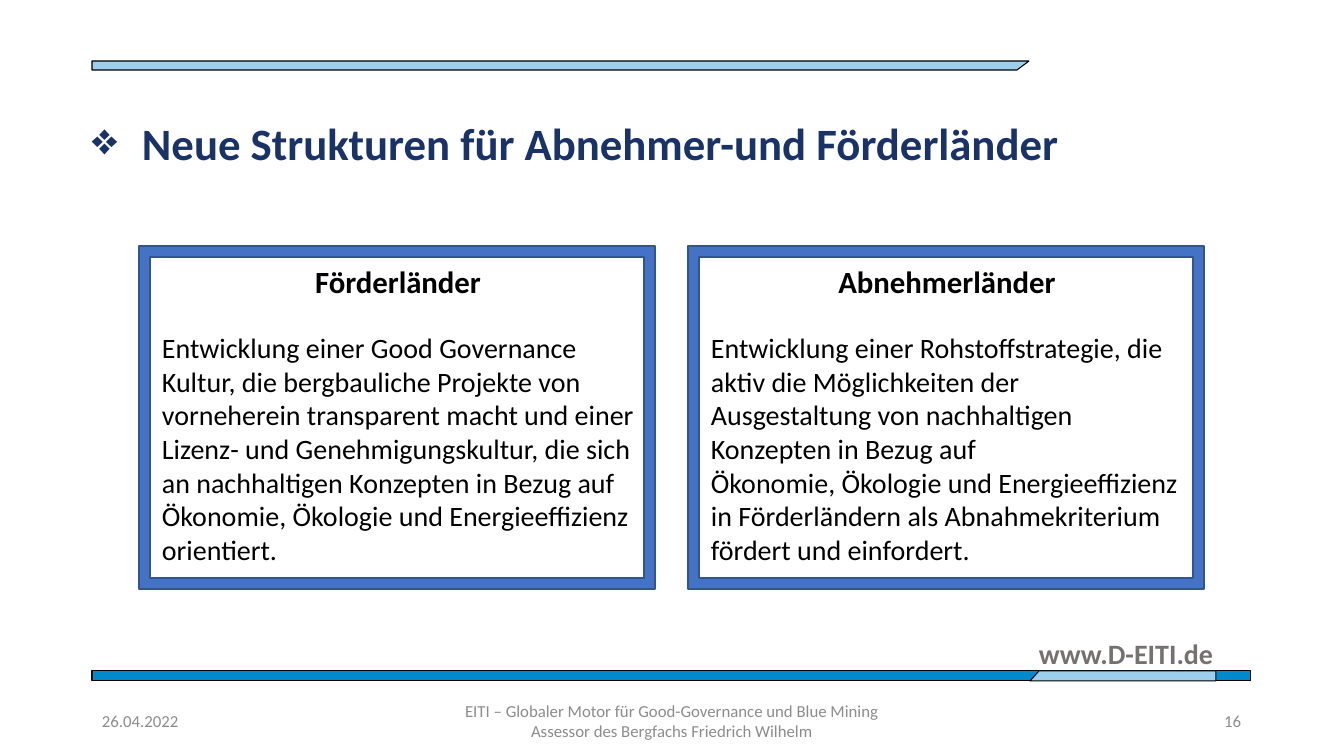
from dataclasses import dataclass

import pptx
import pptx.dml.color
import pptx.enum.shapes
import pptx.enum.text
import pptx.oxml.ns
import pptx.util
from lxml import etree

EMU_PER_PX = 914400 / 100.8
ALIGN = pptx.enum.text.PP_ALIGN
ANCHOR = pptx.enum.text.MSO_ANCHOR


@dataclass(frozen=True)
class Theme:
    font: str = "Calibri"
    title: str = "193268"
    body: str = "000000"
    web: str = "767171"
    footer: str = "8C8C8C"
    pale_bar: str = "9DCEEC"
    strong_bar: str = "008ACB"
    bar_line: str = "000000"
    frame: str = "4472C4"
    frame_line: str = "325491"
    title_size: int = 32
    heading_size: int = 22
    body_size: int = 20
    footer_size: int = 12


@dataclass(frozen=True)
class Box:
    left: int
    top: int
    width: int
    height: int


@dataclass(frozen=True)
class Bar:
    color: str
    points: tuple[tuple[int, int], ...]


@dataclass(frozen=True)
class Panel:
    box: Box
    heading: str
    paragraphs: tuple[str, ...]


@dataclass(frozen=True)
class Label:
    box: Box
    text: str
    size: int
    color: str
    bold: bool = False
    align: ALIGN = ALIGN.LEFT
    anchor: ANCHOR = ANCHOR.MIDDLE


THEME = Theme()

BARS = (
    Bar(THEME.pale_bar, ((92, 70), (1017, 70), (1029, 61), (92, 61))),
    Bar(THEME.strong_bar, ((92, 681), (1251, 681), (1251, 671), (92, 671))),
    Bar(THEME.pale_bar, ((1030, 681), (1216, 681), (1216, 671), (1039, 671))),
)

PANELS = (
    Panel(Box(139, 246, 516, 343), "Förderländer", (
        "Entwicklung einer Good Governance Kultur, die bergbauliche Projekte von "
        "vorneherein transparent macht und einer Lizenz- und Genehmigungskultur, "
        "die sich an nachhaltigen Konzepten in Bezug auf Ökonomie, Ökologie und "
        "Energieeffizienz orientiert.",
    )),
    Panel(Box(688, 246, 516, 343), "Abnehmerländer", (
        "Entwicklung einer Rohstoffstrategie, die aktiv die Möglichkeiten der "
        "Ausgestaltung von nachhaltigen Konzepten in Bezug auf",
        "Ökonomie, Ökologie und Energieeffizienz in Förderländern als "
        "Abnahmekriterium fördert und einfordert.",
    )),
)

LABELS = (
    Label(Box(1029, 632, 201, 44), "www.D-EITI.de", THEME.body_size, THEME.web,
          bold=True, anchor=ANCHOR.TOP),
    Label(Box(92, 701, 302, 40), "26.04.2022", THEME.footer_size, THEME.footer),
    Label(Box(445, 701, 454, 40),
          "EITI – Globaler Motor für Good-Governance und Blue Mining "
          "Assessor des Bergfachs Friedrich Wilhelm",
          THEME.footer_size, THEME.footer, align=ALIGN.CENTER),
    Label(Box(949, 701, 302, 40), "16", THEME.footer_size, THEME.footer,
          align=ALIGN.RIGHT),
)


def px(value: float) -> pptx.util.Emu:
    return pptx.util.Emu(round(value * EMU_PER_PX))


def rgb(color: str) -> pptx.dml.color.RGBColor:
    return pptx.dml.color.RGBColor.from_string(color)


def edges(box: Box) -> tuple[pptx.util.Emu, ...]:
    return px(box.left), px(box.top), px(box.width), px(box.height)


def paint(shape, fill: str, line: str, line_width: int) -> None:
    shape.shadow.inherit = False
    shape.fill.solid()
    shape.fill.fore_color.rgb = rgb(fill)
    shape.line.color.rgb = rgb(line)
    shape.line.width = pptx.util.Pt(line_width)


def add_run(paragraph, text: str, size: int, color: str, bold: bool) -> None:
    run = paragraph.add_run()
    run.text = text
    run.font.name = THEME.font
    run.font.size = pptx.util.Pt(size)
    run.font.bold = bold
    run.font.color.rgb = rgb(color)


def add_text_frame(slide, box: Box, anchor: ANCHOR):
    text_frame = slide.shapes.add_textbox(*edges(box)).text_frame
    text_frame.word_wrap = True
    text_frame.vertical_anchor = anchor
    return text_frame


def add_bar(slide, bar: Bar) -> None:
    start, *rest = bar.points
    builder = slide.shapes.build_freeform(*start, scale=EMU_PER_PX)
    builder.add_line_segments(rest, close=True)
    paint(builder.convert_to_shape(), bar.color, THEME.bar_line, 0)


def add_label(slide, label: Label) -> None:
    paragraph = add_text_frame(slide, label.box, label.anchor).paragraphs[0]
    paragraph.alignment = label.align
    add_run(paragraph, label.text, label.size, label.color, label.bold)


def add_panel(slide, panel: Panel) -> None:
    box = panel.box
    frame = slide.shapes.add_shape(
        pptx.enum.shapes.MSO_SHAPE.FRAME, *edges(box))
    frame.adjustments[0] = 0.032
    paint(frame, THEME.frame, THEME.frame_line, 1)

    inset = Box(box.left + 13, box.top + 12, box.width - 24, box.height - 26)
    text_frame = add_text_frame(slide, inset, ANCHOR.TOP)
    heading = text_frame.paragraphs[0]
    heading.alignment = ALIGN.CENTER
    heading.space_after = pptx.util.Pt(22)
    add_run(heading, panel.heading, THEME.heading_size, THEME.body, True)
    for text in panel.paragraphs:
        add_run(text_frame.add_paragraph(), text, THEME.body_size, THEME.body, False)


def fill_title(slide, text: str) -> None:
    title = slide.shapes.title
    title.left, title.top, title.width, title.height = edges(Box(92, 117, 1159, 60))
    text_frame = title.text_frame
    text_frame.word_wrap = True
    text_frame.margin_left = text_frame.margin_right = 0
    text_frame.vertical_anchor = ANCHOR.TOP
    text_frame.auto_size = pptx.enum.text.MSO_AUTO_SIZE.SHAPE_TO_FIT_TEXT
    paragraph = text_frame.paragraphs[0]
    paragraph.alignment = ALIGN.LEFT
    paragraph.line_spacing = 0.9

    # Diamond bullet with a hanging indent
    properties = paragraph._p.get_or_add_pPr()
    properties.set("marL", str(px(50)))
    properties.set("indent", str(-px(50)))
    bullet = etree.SubElement(properties, pptx.oxml.ns.qn("a:buChar"))
    bullet.set("char", "❖")
    add_run(paragraph, text, THEME.title_size, THEME.title, True)


def main() -> None:
    presentation = pptx.Presentation()
    presentation.slide_width = px(1344)
    presentation.slide_height = px(756)
    slide = presentation.slides.add_slide(presentation.slide_layouts[5])

    # Decorative bars, title, panels, then web address and footer
    for bar in BARS:
        add_bar(slide, bar)
    fill_title(slide, "Neue Strukturen für Abnehmer-und Förderländer")
    for panel in PANELS:
        add_panel(slide, panel)
    for label in LABELS:
        add_label(slide, label)

    presentation.save("out.pptx")


if __name__ == "__main__":
    main()
